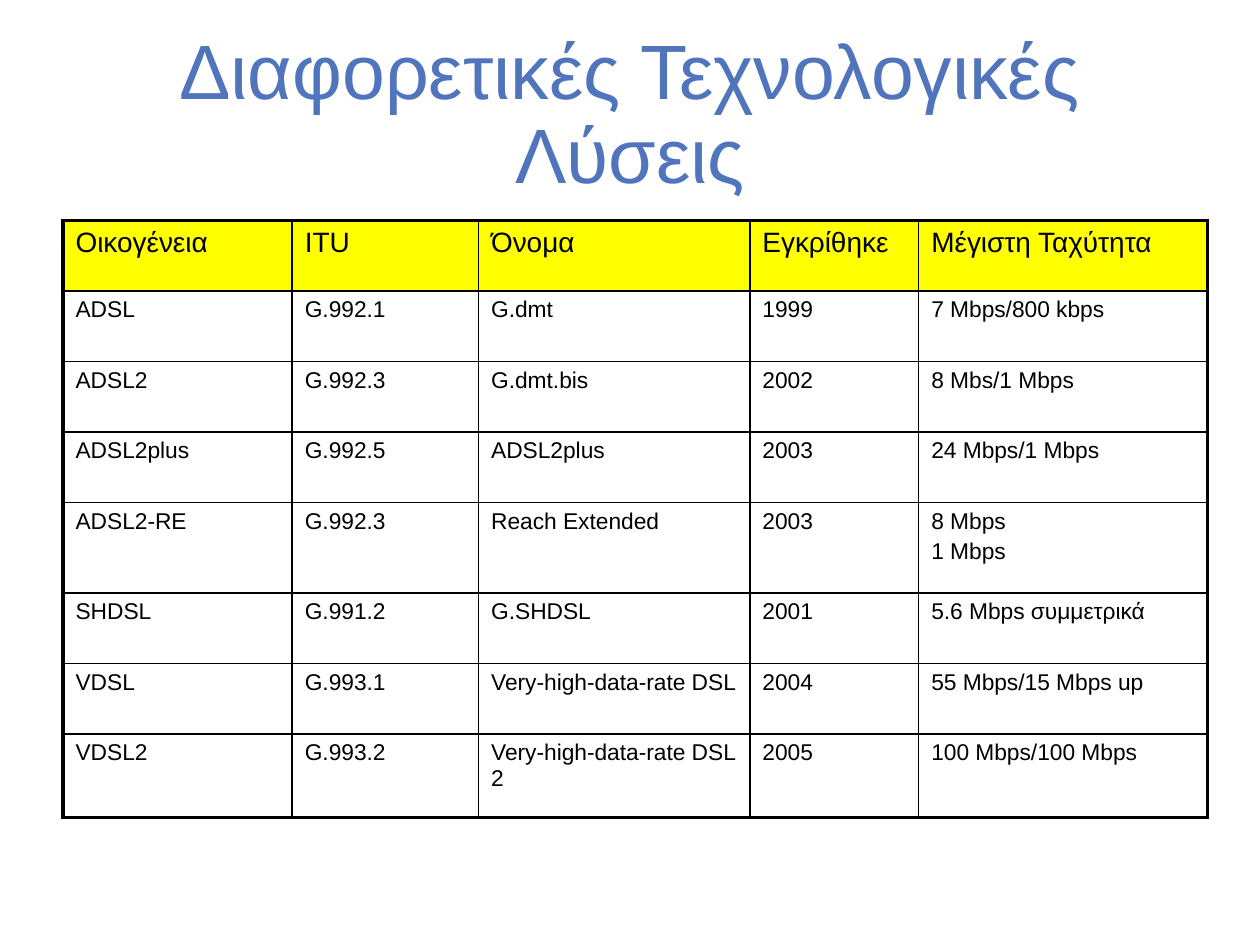
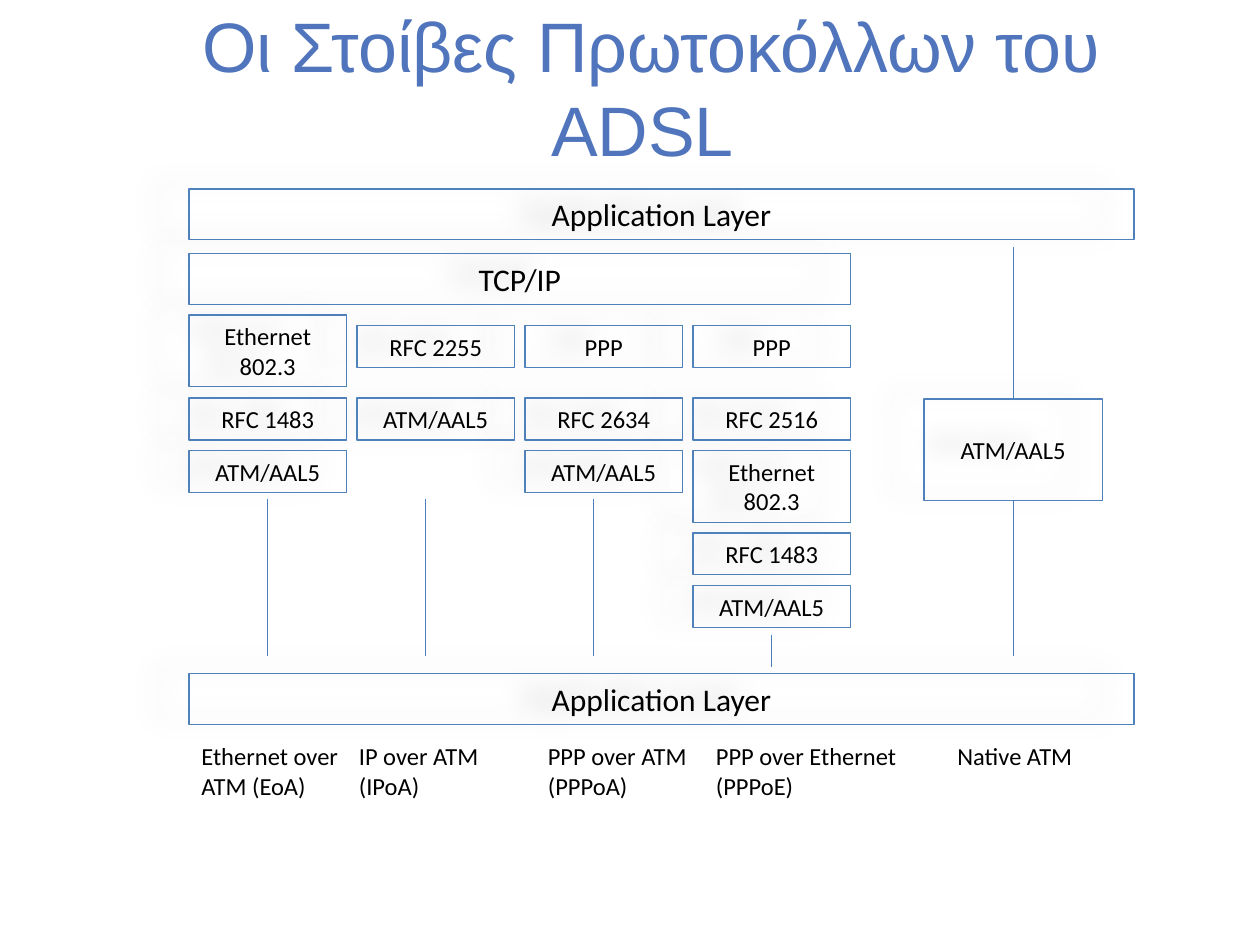
from lxml.etree import SubElement
from pptx import Presentation
from pptx.dml.color import RGBColor
from pptx.enum.shapes import MSO_CONNECTOR as Connector, MSO_SHAPE as Shape
from pptx.enum.text import MSO_ANCHOR as Anchor, MSO_AUTO_SIZE as AutoSize, PP_ALIGN as Align
from pptx.oxml import parse_xml
from pptx.oxml.ns import nsdecls, qn
from pptx.util import Pt

TITLE_BLUE = RGBColor(0x50, 0x75, 0xBC)
BOX_BLUE = RGBColor(0x4F, 0x81, 0xBD)
WIRE_BLUE = RGBColor(0x4B, 0x7E, 0xBC)
YELLOW = RGBColor(0xFF, 0xFF, 0x00)
BLACK = RGBColor(0x00, 0x00, 0x00)

# DSL standards table
COLUMN_WIDTHS = [131, 106.5, 155, 96.5, 165]
ROW_HEIGHTS = [40.3] * 4 + [51.8] + [40.3] * 2 + [47.7]
STANDARDS = [
    ["Οικογένεια", "ITU", "Όνομα", "Εγκρίθηκε", "Μέγιστη Ταχύτητα"],
    ["ADSL", "G.992.1", "G.dmt", "1999", "7 Mbps/800 kbps"],
    ["ADSL2", "G.992.3", "G.dmt.bis", "2002", "8 Mbs/1 Mbps"],
    ["ADSL2plus", "G.992.5", "ADSL2plus", "2003", "24 Mbps/1 Mbps"],
    ["ADSL2-RE", "G.992.3", "Reach Extended", "2003", "8 Mbps\n1 Mbps"],
    ["SHDSL", "G.991.2", "G.SHDSL", "2001", "5.6 Mbps συμμετρικά"],
    ["VDSL", "G.993.1", "Very-high-data-rate DSL", "2004", "55 Mbps/15 Mbps up"],
    ["VDSL2", "G.993.2", "Very-high-data-rate DSL 2", "2005", "100 Mbps/100 Mbps"],
]

# Protocol stacks, each from the top layer down
STACKS = [
    ["Ethernet 802.3", "RFC 1483", "ATM/AAL5"],
    ["RFC 2255", "ATM/AAL5"],
    ["PPP", "RFC 2634", "ATM/AAL5"],
    ["PPP", "RFC 2516", "Ethernet 802.3", "RFC 1483", "ATM/AAL5"],
]
TALL_LAYER = "Ethernet 802.3"
STACK_STEP, LAYER_WIDTH, LAYER_GAP = 96, 90, 6

# Wires under the stacks: x, top, bottom within the diagram
WIRES = [(45, 177, 267), (135, 177, 267), (231, 177, 267), (333, 255, 273)]

# Captions: text, left within the diagram, width, height
CAPTIONS = [
    ("Ethernet over ATM (EoA)", 0, 114, 41),
    ("IP over ATM (IPoA)", 90, 114, 41),
    ("PPP over ATM (PPPoA)", 198, 114, 41),
    ("PPP over Ethernet (PPPoE)", 294, 150, 41),
    ("Native ATM", 432, 108, 24),
]


def style(para, size, font="Calibri", color=BLACK, align=Align.LEFT):
    para.alignment = align
    para.font.size = Pt(size)
    para.font.name = font
    para.font.color.rgb = color


def new_page(deck, title, box, size, line_spacing=1.0):
    """Add a title-only slide with its title in the given box."""
    page = deck.slides.add_slide(deck.slide_layouts[5])
    holder = page.shapes.title
    holder.left, holder.top, holder.width, holder.height = map(Pt, box)
    frame = holder.text_frame
    frame.text = title
    frame.word_wrap = True
    frame.auto_size = AutoSize.NONE
    frame.vertical_anchor = Anchor.MIDDLE
    frame.paragraphs[0].line_spacing = line_spacing
    style(frame.paragraphs[0], size, "Arial", TITLE_BLUE, Align.CENTER)
    return page


def set_borders(cell, thick_sides):
    for side in "LRTB":
        width = Pt(2.25 if side in thick_sides else 1)
        cell._tc.get_or_add_tcPr().append(parse_xml(
            f'<a:ln{side} {nsdecls("a")} w="{width}"><a:solidFill>'
            f'<a:srgbClr val="{BLACK}"/></a:solidFill></a:ln{side}>'))


def standards_table(page, left, top):
    rows, columns = len(ROW_HEIGHTS), len(COLUMN_WIDTHS)
    table = page.shapes.add_table(
        rows, columns, Pt(left), Pt(top),
        Pt(sum(COLUMN_WIDTHS)), Pt(sum(ROW_HEIGHTS))).table
    table.first_row = table.horz_banding = False
    for column, width in zip(table.columns, COLUMN_WIDTHS):
        column.width = Pt(width)
    for r, height in enumerate(ROW_HEIGHTS):
        table.rows[r].height = Pt(height)
        for c, text in enumerate(STANDARDS[r]):
            cell = table.cell(r, c)
            edges = {"L": c == 0, "R": c == columns - 1, "T": r == 0, "B": r == rows - 1}
            set_borders(cell, [side for side, outer in edges.items() if outer])
            if r == 0:
                cell.fill.solid()
                cell.fill.fore_color.rgb = YELLOW
            else:
                cell.fill.background()
            cell.text = text
            for n, para in enumerate(cell.text_frame.paragraphs):
                style(para, 16 if r == 0 else 13, "Arial")
                if n:
                    para.space_before = Pt(2.6)


def layer_box(page, text, left, top, width, height, size=14):
    """Outlined layer with a soft shadow falling to the left."""
    box = page.shapes.add_shape(Shape.RECTANGLE, Pt(left), Pt(top), Pt(width), Pt(height))
    box.fill.background()
    box.line.color.rgb = BOX_BLUE
    box.line.width = Pt(0.75)
    box.shadow.inherit = False
    box._element.spPr.find(qn("a:effectLst")).append(parse_xml(
        f'<a:outerShdw {nsdecls("a")} blurRad="{Pt(14.5)}" dist="{Pt(19)}" '
        f'dir="{192 * 60000}" algn="ctr" rotWithShape="0"><a:srgbClr val="{BLACK}">'
        '<a:alpha val="18000"/></a:srgbClr></a:outerShdw>'))
    frame = box.text_frame
    frame.word_wrap = True
    frame.vertical_anchor = Anchor.MIDDLE
    frame.text = text
    style(frame.paragraphs[0], size, align=Align.CENTER)
    return box


def wire(page, x, top, bottom):
    line = page.shapes.add_connector(Connector.STRAIGHT, Pt(x), Pt(top), Pt(x), Pt(bottom))
    line.line.color.rgb = WIRE_BLUE
    line.line.width = Pt(0.75)
    SubElement(line._element.spPr, qn("a:effectLst"))
    return line


def protocol_stack(page, layers, left, top):
    """Top layer is centred on its row; the rest pile up below at an equal gap."""
    y = top + 41.5
    for n, text in enumerate(layers):
        height = 41 if text == TALL_LAYER else 24
        if n == 0:
            first_top = top - 6 if text == TALL_LAYER else top
            layer_box(page, text, left, first_top, LAYER_WIDTH, height)
        else:
            layer_box(page, text, left, y, LAYER_WIDTH, height)
            y += height + LAYER_GAP


def caption(page, text, left, top, width, height):
    box = page.shapes.add_textbox(Pt(left), Pt(top), Pt(width), Pt(height))
    box.text_frame.word_wrap = True
    box.text_frame.text = text
    style(box.text_frame.paragraphs[0], 14)


def stacks_diagram(page, left, top, width):
    # Full-width bars and the shared TCP/IP layer
    for y in (0, 277):
        layer_box(page, "Application Layer", left, top + y, width, 29, 18)
    tcp_width = STACK_STEP * (len(STACKS) - 1) + LAYER_WIDTH
    layer_box(page, "TCP/IP", left, top + 37, tcp_width, 29, 18)

    # Stacks and their wires
    for n, layers in enumerate(STACKS):
        protocol_stack(page, layers, left + n * STACK_STEP, top + 78)
    for x, start, end in WIRES:
        wire(page, left + x, top + start, top + end)

    # Native ATM, wired straight through
    native = layer_box(page, "ATM/AAL5", left + 420, top + 120, 102, 58)
    wire(page, left + 471, top + 33, top + 120).end_connect(native, 0)
    wire(page, left + 471, top + 178, top + 267).begin_connect(native, 2)

    # Captions
    for text, x, caption_width, height in CAPTIONS:
        caption(page, text, left + x, top + 312, caption_width, height)


def main():
    deck = Presentation()
    deck.slide_width, deck.slide_height = Pt(720), Pt(540)

    page = new_page(deck, "Διαφορετικές Τεχνολογικές Λύσεις", (36, 21.6, 648, 90), 44, 0.9)
    standards_table(page, 36, 126)

    page = new_page(deck, "Οι Στοίβες Πρωτοκόλλων του ADSL ", (60, 21.6, 624, 56), 40)
    stacks_diagram(page, 108, 108, 540)

    deck.save("out.pptx")


if __name__ == "__main__":
    main()
